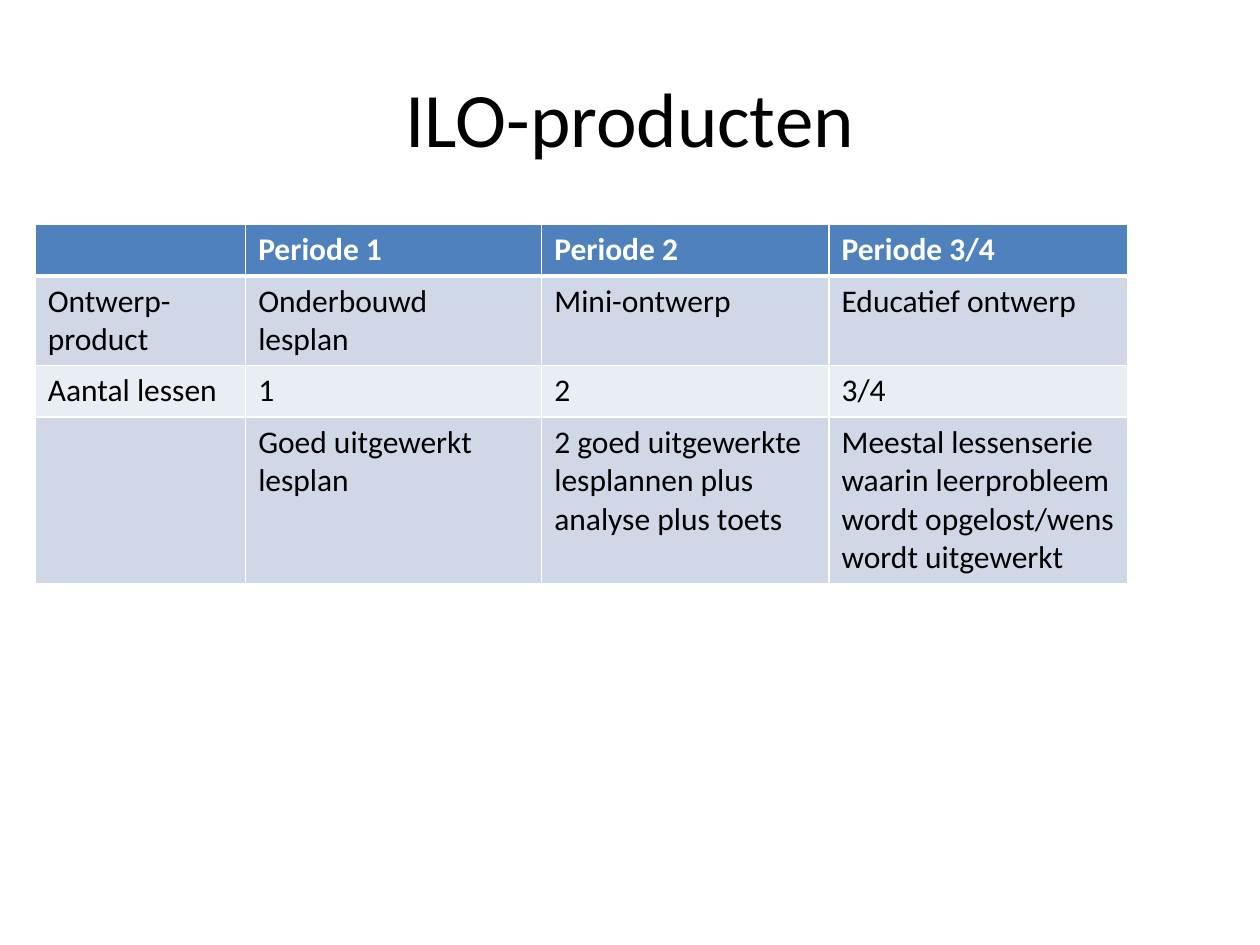
from dataclasses import dataclass

from lxml import etree
from pptx import Presentation
from pptx.dml.color import RGBColor
from pptx.enum.text import MSO_ANCHOR, PP_ALIGN
from pptx.oxml.ns import qn
from pptx.util import Inches, Pt

MIDDLE = MSO_ANCHOR.MIDDLE
CENTER = PP_ALIGN.CENTER
TITLE_ONLY = 5


@dataclass(frozen=True)
class Theme:
    font: str = "Calibri"
    title_size: int = 44
    table_size: int = 18
    text: str = "000000"
    header_text: str = "FFFFFF"
    header_fill: str = "4F81BD"
    bands: tuple = ("D0D8E8", "E9EDF4")
    border: str = "FFFFFF"
    thin: int = 1
    thick: int = 3


THEME = Theme()
COLUMN_WIDTHS = (1.67, 2.35, 2.28, 2.37)
ROW_HEIGHT = 0.41

# Each line of a cell is its own paragraph
ROWS = (
    ("", "Periode 1", "Periode 2", "Periode 3/4"),
    ("Ontwerp-product", "Onderbouwd\nlesplan", "Mini-ontwerp", "Educatief ontwerp"),
    ("Aantal lessen", "1", "2", "3/4"),
    (
        "",
        "Goed uitgewerkt lesplan",
        "2 goed uitgewerkte lesplannen plus analyse plus toets",
        "Meestal lessenserie waarin leerprobleem wordt opgelost/wens wordt uitgewerkt",
    ),
)


def add_span(para, text, size, color, bold=False):
    span = para.add_run()
    span.text = text
    span.font.name = THEME.font
    span.font.size = Pt(size)
    span.font.bold = bold
    span.font.color.rgb = RGBColor.from_string(color)


def set_borders(cell, top, bottom):
    """Draw the four cell borders; they must precede the fill in the XML."""
    properties = cell._tc.get_or_add_tcPr()
    widths = (("lnL", THEME.thin), ("lnR", THEME.thin), ("lnT", top), ("lnB", bottom))
    for index, (tag, width) in enumerate(widths):
        line = etree.Element(qn(f"a:{tag}"), w=str(Pt(width)))
        fill = etree.SubElement(line, qn("a:solidFill"))
        etree.SubElement(fill, qn("a:srgbClr"), val=THEME.border)
        properties.insert(index, line)


def build_title(page, text, left, top, width, height):
    title = page.shapes.title
    title.left, title.top = Inches(left), Inches(top)
    title.width, title.height = Inches(width), Inches(height)
    title.text_frame.vertical_anchor = MIDDLE
    para = title.text_frame.paragraphs[0]
    para.alignment = CENTER
    add_span(para, text, THEME.title_size, THEME.text)


def fill_cell(cell, text, row):
    header = row == 0
    fill = THEME.header_fill if header else THEME.bands[(row - 1) % 2]
    cell.fill.solid()
    cell.fill.fore_color.rgb = RGBColor.from_string(fill)
    set_borders(
        cell,
        top=THEME.thick if row == 1 else THEME.thin,
        bottom=THEME.thick if header else THEME.thin,
    )
    frame = cell.text_frame
    frame.paragraphs[0].font.size = Pt(THEME.table_size)
    for index, line in enumerate(text.splitlines()):
        para = frame.add_paragraph() if index else frame.paragraphs[0]
        color = THEME.header_text if header else THEME.text
        add_span(para, line, THEME.table_size, color, bold=header)


def build_table(page, rows, left, top):
    table = page.shapes.add_table(
        len(rows), len(COLUMN_WIDTHS), Inches(left), Inches(top),
        Inches(sum(COLUMN_WIDTHS)), Inches(ROW_HEIGHT * len(rows)),
    ).table
    for column, width in zip(table.columns, COLUMN_WIDTHS):
        column.width = Inches(width)
    for row, texts in enumerate(rows):
        table.rows[row].height = Inches(ROW_HEIGHT)
        for column, text in enumerate(texts):
            fill_cell(table.cell(row, column), text, row)


def main():
    deck = Presentation()
    deck.slide_width, deck.slide_height = Inches(10), Inches(7.5)
    page = deck.slides.add_slide(deck.slide_layouts[TITLE_ONLY])
    build_title(page, "ILO-producten", 0.5, 0.3, 9, 1.25)
    build_table(page, ROWS, 0.28, 1.78)
    deck.save("out.pptx")


if __name__ == "__main__":
    main()
